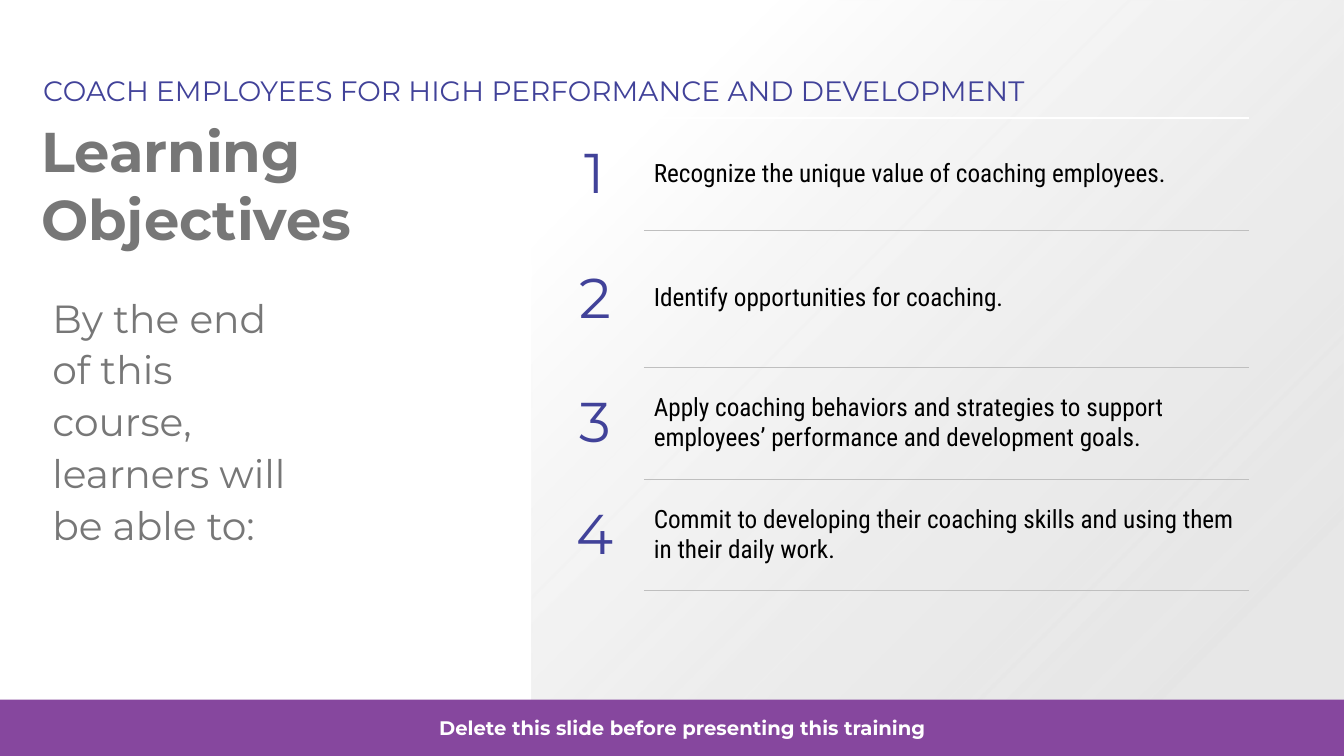
from lxml import etree
from pptx import Presentation
from pptx import util as u
from pptx.dml.color import RGBColor
from pptx.enum import shapes, text
from pptx.oxml import ns

COLORS = {
    "white": "FFFFFF", "shade": "D9D9D9", "gray": "777777", "indigo": "414299",
    "black": "000000", "rule": "BFBFBF", "purple": "86479E",
}
OBJECTIVES = [
    "Recognize the unique value of coaching employees.",
    "Identify opportunities for coaching.",
    "Apply coaching behaviors and strategies to support employees’ performance and development goals.",
    "Commit to developing their coaching skills and using them in their daily work.",
]
ROW_HEIGHTS = [1.11, 1.36, 1.11, 1.11]


def write(frame, words, size, color, font="Montserrat", bold=False):
    frame.text = words
    frame.word_wrap = True
    for para in frame.paragraphs:
        for span in para.runs:
            span.font.size = u.Pt(size)
            span.font.name = font
            span.font.bold = bold
            span.font.color.rgb = RGBColor.from_string(COLORS[color])


def add_border(cell, side, color, width, index):
    line = etree.Element(ns.qn(f"a:ln{side}"), w=str(u.Pt(width)))
    fill = etree.SubElement(line, ns.qn("a:solidFill"))
    etree.SubElement(fill, ns.qn("a:srgbClr"), val=COLORS[color])
    cell._tc.get_or_add_tcPr().insert(index, line)


deck = Presentation()
deck.slide_width = u.Inches(13.34)
deck.slide_height = u.Inches(7.5)
page = deck.slides.add_slide(deck.slide_layouts[6])

# Shaded panel on the right
panel = page.shapes.add_shape(shapes.MSO_SHAPE.RECTANGLE, u.Inches(5.28), 0,
                              u.Inches(8.06), u.Inches(7.5))
panel.shadow.inherit = False
panel.line.fill.background()
panel.fill.gradient()
panel.fill.gradient_angle = 315
for stop, position, color in zip(panel.fill.gradient_stops, (0.15, 0.85), ("white", "shade")):
    stop.position = position
    stop.color.rgb = RGBColor.from_string(COLORS[color])
shade = panel._element.spPr.findall(".//" + ns.qn("a:srgbClr"))[-1]
etree.SubElement(shade, ns.qn("a:alpha"), val="64000")

# Title and course name
title = page.shapes.add_textbox(u.Inches(0.31), u.Inches(1.11), u.Inches(7.53), u.Inches(1.71))
write(title.text_frame, "Learning\nObjectives", 40, "gray", bold=True)
course = page.shapes.add_textbox(u.Inches(0.33), u.Inches(0.68), u.Inches(11.54), u.Inches(0.4))
write(course.text_frame, "COACH EMPLOYEES FOR HIGH PERFORMANCE AND DEVELOPMENT", 20, "indigo")

# Numbered objectives
table = page.shapes.add_table(len(OBJECTIVES), 2, u.Inches(5.42), u.Inches(1.17),
                              u.Inches(6.98), u.Inches(sum(ROW_HEIGHTS))).table
table.first_row = table.horz_banding = False
no_style = "{2D5ABB26-0587-4C30-8999-92F81FD0307C}"
table._tbl.tblPr.find(ns.qn("a:tableStyleId")).text = no_style
for column, width in zip(table.columns, (0.97, 6.01)):
    column.width = u.Inches(width)
for row, (objective, height) in enumerate(zip(OBJECTIVES, ROW_HEIGHTS)):
    table.rows[row].height = u.Inches(height)
    number, goal = table.cell(row, 0), table.cell(row, 1)
    write(number.text_frame, str(row + 1), 40, "indigo")
    number.text_frame.paragraphs[0].alignment = text.PP_ALIGN.CENTER
    write(goal.text_frame, objective, 18, "black", "Roboto Condensed")
    for cell in (number, goal):
        cell.vertical_anchor = text.MSO_ANCHOR.MIDDLE
        cell.fill.background()
    top_color, top_width = ("rule", 0.25) if row else ("white", 1)
    add_border(goal, "T", top_color, top_width, 0)
    add_border(goal, "B", "rule", 0.25, 1)

# Lead-in sentence
lead = page.shapes.add_textbox(u.Inches(0.52), u.Inches(2.87), u.Inches(2.49), u.Inches(1.24))
frame = lead.text_frame
write(frame, "By the end of this course, learners will be able to:", 28, "gray")
frame.margin_left = frame.margin_right = frame.margin_top = frame.margin_bottom = 0
frame.paragraphs[0].line_spacing = 1.1
frame.paragraphs[0].space_before = u.Pt(10)

# Footer banner
footer = page.shapes.add_group_shape()
band = footer.shapes.add_shape(shapes.MSO_SHAPE.RECTANGLE, 0, u.Inches(6.94),
                               u.Inches(13.34), u.Inches(0.56))
band.shadow.inherit = False
band.fill.solid()
band.fill.fore_color.rgb = RGBColor.from_string(COLORS["purple"])
band.line.fill.background()
notice = footer.shapes.add_textbox(u.Inches(4.26), u.Inches(7.05), u.Inches(5.15), u.Inches(0.34))
write(notice.text_frame, "Delete this slide before presenting this training", 14, "white", bold=True)
notice.text_frame.auto_size = text.MSO_AUTO_SIZE.SHAPE_TO_FIT_TEXT

deck.save("out.pptx")
